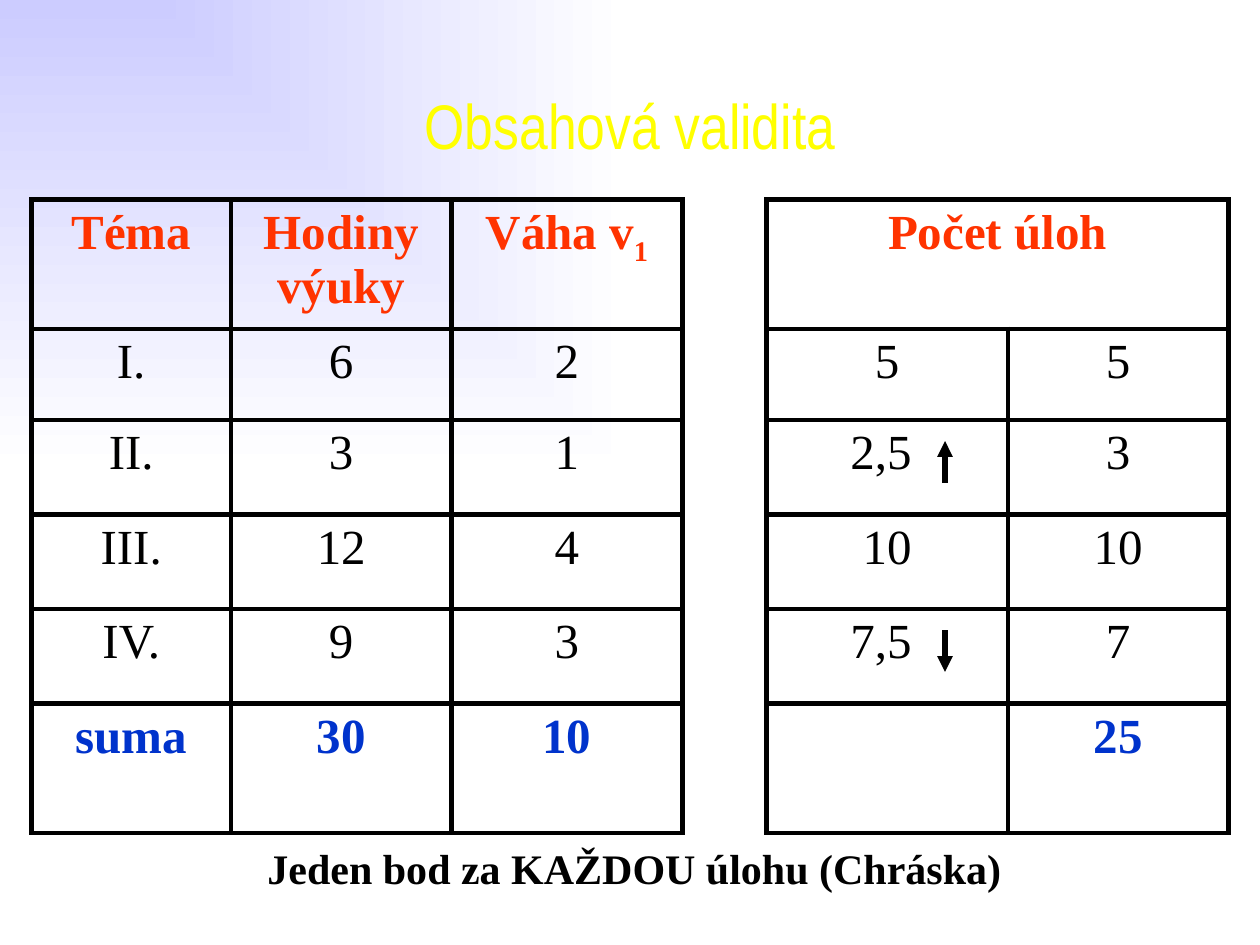
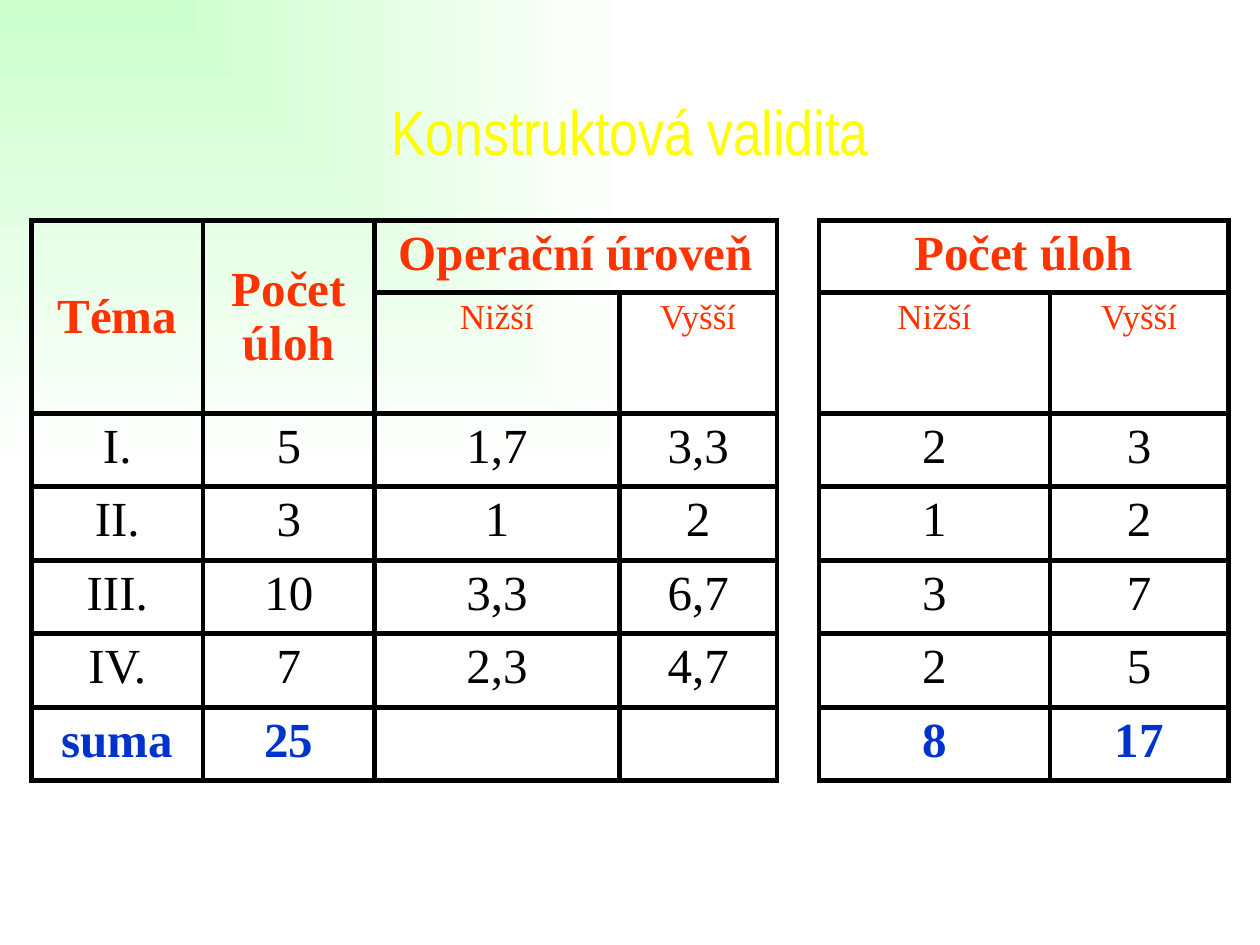
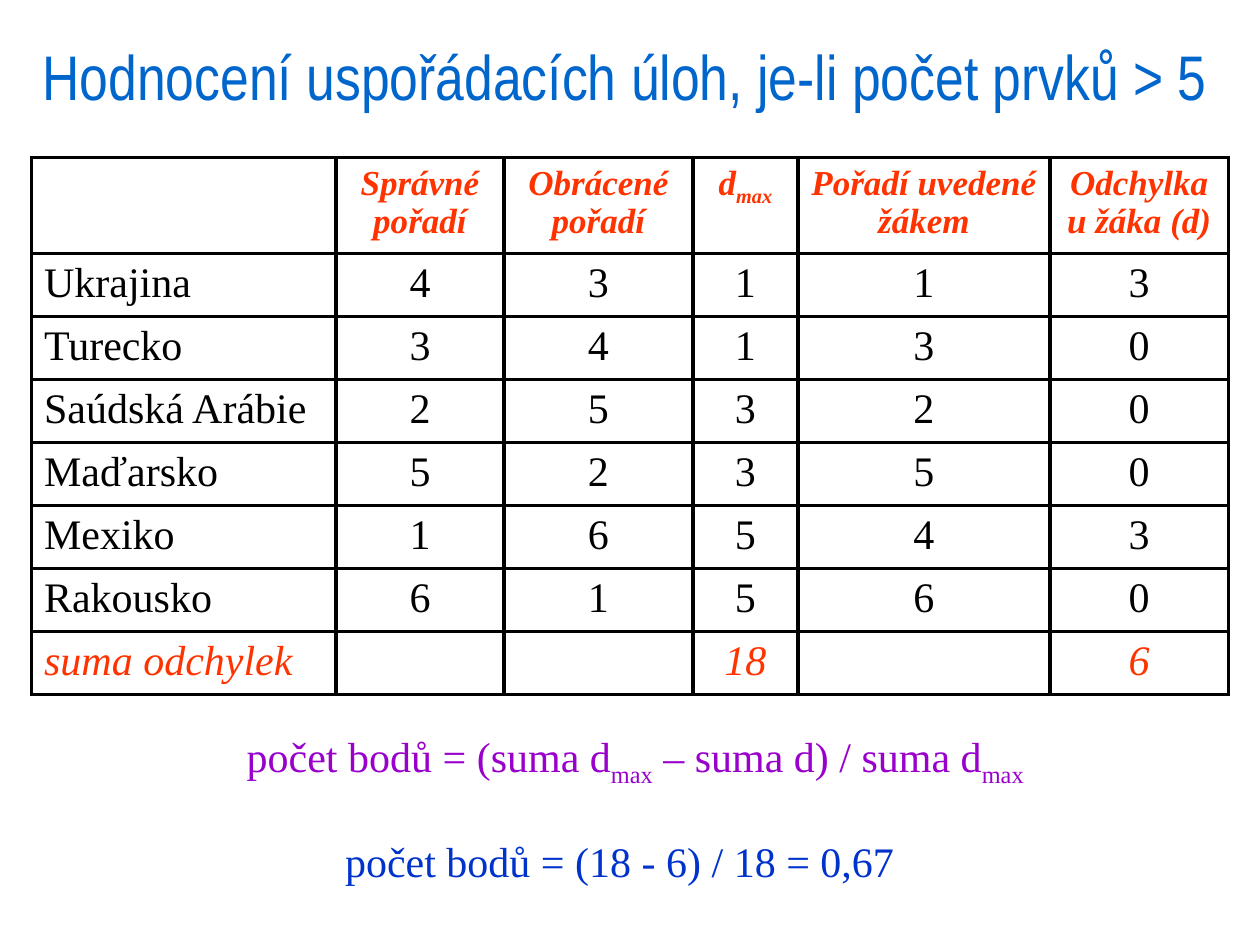
from lxml import etree
from pptx import Presentation
from pptx.dml.color import RGBColor
from pptx.enum import shapes, text
from pptx.oxml import ns
from pptx.util import Pt

BLACK = RGBColor(0x00, 0x00, 0x00)
WHITE = RGBColor(0xFF, 0xFF, 0xFF)
YELLOW = RGBColor(0xFF, 0xFF, 0x00)
RED = RGBColor(0xFF, 0x33, 0x00)
BLUE = RGBColor(0x00, 0x33, 0xCC)
TITLE_BLUE = RGBColor(0x00, 0x66, 0xCC)
PURPLE = RGBColor(0x99, 0x00, 0xCC)
LILAC = RGBColor(0xCC, 0xCC, 0xFF)
MINT = RGBColor(0xCC, 0xFF, 0xCC)

TITLE_FONT = "Arial Narrow"
BODY_FONT = "Times New Roman"
TABLE_LEFT = 18

HEAD = dict(size=28, color=RED, bold=True)
LEVEL = dict(size=20, color=RED)
VALUE = dict(size=28)
TOTAL = dict(size=28, color=BLUE, bold=True)
RANK_HEAD = dict(size=20, color=RED, bold=True, italic=True)
RANK_VALUE = dict(size=24)
RANK_TOTAL = dict(size=24, color=RED, italic=True)


def write(frame, content, size=24, color=BLACK, font=BODY_FONT, bold=False,
          italic=False, align=text.PP_ALIGN.CENTER):
    """Write one paragraph; every second part between bars is a subscript."""
    paragraph = frame.paragraphs[0]
    paragraph.alignment = align
    for index, part in enumerate(content.split("|")):
        if not part:
            continue
        run = paragraph.add_run()
        run.text = part
        run.font.size = Pt(size)
        run.font.name = font
        run.font.bold = bold
        run.font.italic = italic
        run.font.color.rgb = color
        if index % 2:
            run.font._element.set("baseline", "-25000")


def add_titled_slide(deck, heading, left, top, width, color):
    """Add a slide with its heading in the title placeholder."""
    slide = deck.slides.add_slide(deck.slide_layouts[5])
    title = slide.shapes.title
    title.left, title.top, title.width, title.height = map(Pt, (left, top, width, 45))
    frame = title.text_frame
    frame.auto_size = text.MSO_AUTO_SIZE.NONE
    frame.word_wrap = False
    frame.margin_left = frame.margin_right = Pt(0)
    frame.vertical_anchor = text.MSO_ANCHOR.TOP
    write(frame, heading, size=36, color=color, font=TITLE_FONT)
    return slide


def shade_corner(slide, tint):
    """Fade the background from a tint in the top left corner to white."""
    fill = slide.background.fill
    fill.gradient()
    for stop, color in zip(fill.gradient_stops, (tint, WHITE)):
        stop.color.rgb = color
    gradient = slide.element.find(".//" + ns.qn("a:gradFill"))
    gradient.remove(gradient.find(ns.qn("a:lin")))
    fade = etree.SubElement(gradient, ns.qn("a:path"), {"path": "rect"})
    etree.SubElement(fade, ns.qn("a:fillToRect"), {"r": "100000", "b": "100000"})


def set_borders(cell, width, visible):
    """Draw the named sides in black and clear the others."""
    properties = cell._tc.get_or_add_tcPr()
    for index, side in enumerate("LRTB"):
        line = etree.Element(ns.qn(f"a:ln{side}"), {"w": str(Pt(width))})
        if side in visible:
            solid = etree.SubElement(line, ns.qn("a:solidFill"))
            etree.SubElement(solid, ns.qn("a:srgbClr"), {"val": str(BLACK)})
        else:
            etree.SubElement(line, ns.qn("a:noFill"))
        properties.insert(index, line)


def add_grid(slide, top, widths, rows, border=3, merges=(), gap=None,
             label_align=text.PP_ALIGN.CENTER):
    """Add a table from rows of (height, format, cell texts)."""
    heights = [height for height, _, _ in rows]
    grid = slide.shapes.add_table(
        len(rows), len(widths), Pt(TABLE_LEFT), Pt(top),
        Pt(sum(widths)), Pt(sum(heights))).table
    grid.first_row = grid.horz_banding = False
    for column, width in zip(grid.columns, widths):
        column.width = Pt(width)
    for r, (height, style, contents) in enumerate(rows):
        grid.rows[r].height = Pt(height)
        for c, content in enumerate(contents):
            cell = grid.cell(r, c)
            cell.fill.background()
            set_borders(cell, border, "LR" if c == gap else "LRTB")
            is_label = c == 0 and r > 0
            align = label_align if is_label else text.PP_ALIGN.CENTER
            write(cell.text_frame, content, align=align, **style)
    for r1, c1, r2, c2 in merges:
        origin = grid.cell(r1, c1)
        origin.merge(grid.cell(r2, c2))
        if r2 > r1:
            origin.vertical_anchor = text.MSO_ANCHOR.MIDDLE


def add_caption(slide, content, left, top, width, **style):
    """Add a line of text below a table."""
    box = slide.shapes.add_textbox(Pt(left), Pt(top), Pt(width), Pt(36))
    box.text_frame.word_wrap = True
    write(box.text_frame, content, **style)


def add_rounding_arrow(slide, x, start, end):
    """Add a vertical arrow that shows the direction of rounding."""
    arrow = slide.shapes.add_connector(
        shapes.MSO_CONNECTOR.STRAIGHT, Pt(x), Pt(start), Pt(x), Pt(end))
    arrow.line.color.rgb = BLACK
    arrow.line.width = Pt(3)
    outline = arrow.line._get_or_add_ln()
    etree.SubElement(outline, ns.qn("a:tailEnd"), {"type": "triangle"})
    etree.SubElement(arrow._element.spPr, ns.qn("a:effectLst"))


def build_content_validity(deck):
    """Build the slide on content validity."""
    slide = add_titled_slide(deck, "Obsahová validita", 18.5, 46, 683, YELLOW)
    shade_corner(slide, LILAC)
    rows = [
        (74, HEAD, ["Téma", "Hodiny výuky", "Váha v|1", "", "Počet úloh", ""]),
        (52, VALUE, ["I.", "6", "2", "", "5", "5"]),
        (54, VALUE, ["II.", "3", "1", "", "2,5 ", "3"]),
        (54, VALUE, ["III.", "12", "4", "", "10", "10"]),
        (54, VALUE, ["IV.", "9", "3", "", "7,5 ", "7"]),
        (74, TOTAL, ["suma", "30", "10", "", "", "25"]),
    ]
    add_grid(slide, 114, [114, 126, 132, 48, 138, 126], rows, gap=3,
             merges=[(0, 3, 5, 3), (0, 4, 0, 5)])
    add_rounding_arrow(slide, 540, 360, 384)
    add_rounding_arrow(slide, 540, 276, 252)
    add_caption(slide, "Jeden bod za KAŽDOU úlohu (Chráska)", 22.5, 478, 680, bold=True)


def build_construct_validity(deck):
    """Build the slide on construct validity."""
    slide = add_titled_slide(deck, "Konstruktová validita", 18, 49, 684, YELLOW)
    shade_corner(slide, MINT)
    rows = [
        (41, HEAD, ["Téma", "Počet úloh", "Operační úroveň", "", "", "Počet úloh", ""]),
        (69, LEVEL, ["", "", "Nižší", "Vyšší", "", "Nižší", "Vyšší"]),
        (42, VALUE, ["I.", "5", "1,7", "3,3", "", "2", "3"]),
        (42, VALUE, ["II.", "3", "1", "2", "", "1", "2"]),
        (42, VALUE, ["III.", "10", "3,3", "6,7", "", "3", "7"]),
        (42, VALUE, ["IV.", "7", "2,3", "4,7", "", "2", "5"]),
        (42, TOTAL, ["suma", "25", "", "", "", "8", "17"]),
    ]
    add_grid(slide, 126, [98, 98, 140, 90, 24, 132, 102], rows, gap=4,
             merges=[(0, 0, 1, 0), (0, 1, 1, 1), (0, 2, 0, 3), (0, 4, 6, 4), (0, 5, 0, 6)])


def build_ordering_score(deck):
    """Build the slide on scoring ordering tasks."""
    slide = add_titled_slide(
        deck, "Hodnocení uspořádacích úloh, je-li počet prvků > 5", 18, 18, 678, TITLE_BLUE)
    slide.background.fill.solid()
    slide.background.fill.fore_color.rgb = WHITE
    countries = [
        ["Ukrajina", "4", "3", "1", "1", "3"],
        ["Turecko", "3", "4", "1", "3", "0"],
        ["Saúdská Arábie", "2", "5", "3", "2", "0"],
        ["Maďarsko", "5", "2", "3", "5", "0"],
        ["Mexiko", "1", "6", "5", "4", "3"],
        ["Rakousko", "6", "1", "5", "6", "0"],
    ]
    rows = [
        (55, RANK_HEAD, ["", "Správné pořadí", "Obrácené pořadí", "d|max",
                         "Pořadí uvedené žákem", "Odchylka u žáka (d)"]),
        *[(36, RANK_VALUE, country) for country in countries],
        (36, RANK_TOTAL, ["suma odchylek", "", "", "18", "", "6"]),
    ]
    add_grid(slide, 90, [174, 96, 108, 60, 144, 102], rows, border=2.25,
             label_align=text.PP_ALIGN.LEFT)
    add_caption(slide, "počet bodů = (suma d|max| – suma d) / suma d|max",
                72, 414, 582, color=PURPLE)
    add_caption(slide, "počet bodů = (18 - 6) / 18 = 0,67", 168, 474, 372, color=BLUE)


def main():
    """Build and save the presentation."""
    deck = Presentation()
    deck.slide_width, deck.slide_height = Pt(720), Pt(540)
    build_content_validity(deck)
    build_construct_validity(deck)
    build_ordering_score(deck)
    deck.save("out.pptx")


if __name__ == "__main__":
    main()
